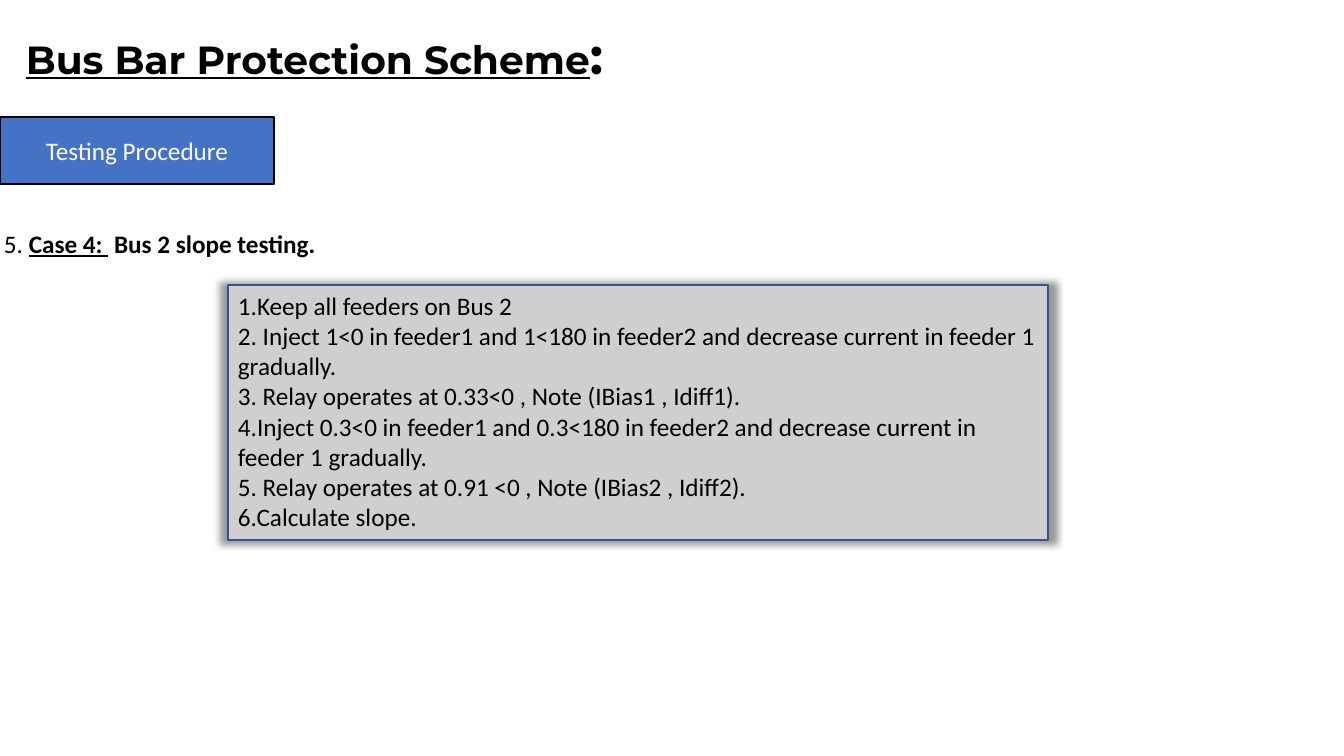
from lxml.etree import SubElement
from pptx import Presentation
from pptx.dml.color import RGBColor
from pptx.enum.shapes import MSO_SHAPE
from pptx.enum.text import MSO_ANCHOR, PP_ALIGN
from pptx.oxml.ns import qn
from pptx.util import Emu, Pt

BLACK = RGBColor(0x00, 0x00, 0x00)
WHITE = RGBColor(0xFF, 0xFF, 0xFF)
BLUE = RGBColor(0x44, 0x72, 0xC4)
DARK_BLUE = RGBColor(0x32, 0x54, 0x91)
GREY = RGBColor(0xD0, 0xCE, 0xCE)

# Content: runs are (text, size, bold, underline)
TITLE = [("Bus Bar Protection Scheme", 28, True, True), (":", 36, True, False)]
CASE = [
    ("5. ", 18, False, False),
    ("Case 4: ", 18, True, True),
    (" Bus 2 slope testing.", 18, True, False),
]
LABEL = ["Testing Procedure"]
STEPS = [
    "1.Keep all feeders on Bus 2",
    "2. Inject 1<0 in feeder1 and 1<180 in feeder2 and decrease current in feeder 1 gradually.",
    "3. Relay operates at 0.33<0 , Note (IBias1 , Idiff1).",
    "4.Inject 0.3<0 in feeder1 and 0.3<180 in feeder2 and decrease current in feeder 1 gradually.",
    "5. Relay operates at 0.91 <0 , Note (IBias2 , Idiff2).",
    "6.Calculate slope.",
]

# Places in px: left, top, width, height
SLIDE_SIZE = (1344, 756)
TITLE_BOX = (16, 19, 1210, 72)
LABEL_BOX = (0, 117, 274, 67)
CASE_BOX = (-6, 223, 335, 40)
STEPS_BOX = (228, 285, 820, 255)


def px(value):
    return Emu(round(value * 914400 / 100.8))


def add_heading(slide, box, runs, font_name, wrap):
    shape = slide.shapes.add_textbox(*map(px, box))
    shape.text_frame.word_wrap = wrap
    paragraph = shape.text_frame.paragraphs[0]
    paragraph.font.name = font_name
    paragraph.font.color.rgb = BLACK
    for text, size, bold, underline in runs:
        run = paragraph.add_run()
        run.text = text
        run.font.name = font_name
        run.font.size = Pt(size)
        run.font.bold = bold
        run.font.underline = underline


def add_panel(slide, box, lines, fill, outline, color, align, anchor):
    shape = slide.shapes.add_shape(MSO_SHAPE.RECTANGLE, *map(px, box))
    shape.shadow.inherit = False
    shape.fill.solid()
    shape.fill.fore_color.rgb = fill
    shape.line.color.rgb = outline
    shape.line.width = Pt(1)
    frame = shape.text_frame
    frame.word_wrap = True
    frame.vertical_anchor = anchor
    frame.text = "\n".join(lines)
    for paragraph in frame.paragraphs:
        paragraph.alignment = align
        paragraph.font.name = "Calibri"
        paragraph.font.size = Pt(18)
        paragraph.font.color.rgb = color
    return shape


def add_glow_shadow(shape):
    effects = shape.element.spPr.find(qn("a:effectLst"))
    shadow = SubElement(effects, qn("a:outerShdw"), blurRad=str(Pt(5)),
                        sx="102000", sy="102000", algn="ctr", rotWithShape="0")
    color = SubElement(shadow, qn("a:srgbClr"), val=str(BLACK))
    SubElement(color, qn("a:alpha"), val="40000")


def main():
    presentation = Presentation()
    presentation.slide_width, presentation.slide_height = map(px, SLIDE_SIZE)
    slide = presentation.slides.add_slide(presentation.slide_layouts[6])

    # Title, label and case heading
    add_heading(slide, TITLE_BOX, TITLE, "Montserrat", True)
    add_panel(slide, LABEL_BOX, LABEL, BLUE, BLACK, WHITE,
              PP_ALIGN.CENTER, MSO_ANCHOR.MIDDLE)
    add_heading(slide, CASE_BOX, CASE, "Calibri", False)

    # Test steps
    steps = add_panel(slide, STEPS_BOX, STEPS, GREY, DARK_BLUE, BLACK,
                      PP_ALIGN.LEFT, MSO_ANCHOR.TOP)
    add_glow_shadow(steps)

    presentation.save("out.pptx")


if __name__ == "__main__":
    main()
